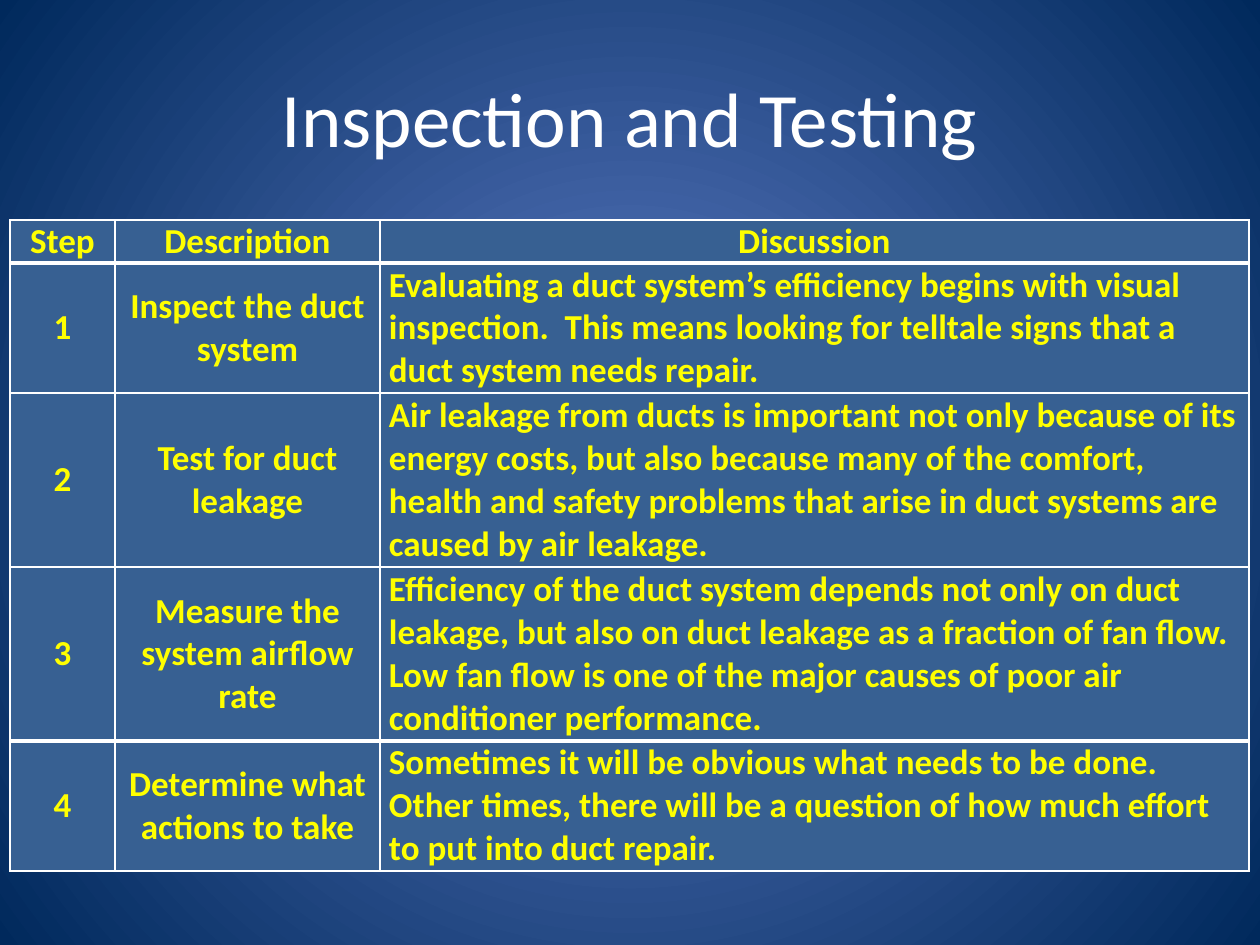
from lxml import etree
from pptx import Presentation
from pptx.dml.color import RGBColor
from pptx.enum.text import MSO_ANCHOR, PP_ALIGN
from pptx.oxml import parse_xml
from pptx.oxml.ns import nsdecls, qn
from pptx.util import Pt

LEFT, CENTER, MIDDLE = PP_ALIGN.LEFT, PP_ALIGN.CENTER, MSO_ANCHOR.MIDDLE
FONT = "Calibri"
WHITE, YELLOW, CELL_BLUE = "FFFFFF", "FFFF00", "376092"
GLOW, NAVY = "5E7CC5", "00295C"

TITLE = "Inspection and Testing"
ROWS = [
    ("Step", "Description", "Discussion"),
    ("1", "Inspect the duct system",
     "Evaluating a duct system’s efficiency begins with visual inspection.  "
     "This means looking for telltale signs that a duct system needs repair."),
    ("2", "Test for duct leakage",
     "Air leakage from ducts is important not only because of its energy costs, "
     "but also because many of the comfort, health and safety problems that arise "
     "in duct systems are caused by air leakage."),
    ("3", "Measure the system airflow rate",
     "Efficiency of the duct system depends not only on duct leakage, but also on "
     "duct leakage as a fraction of fan flow.  Low fan flow is one of the major "
     "causes of poor air conditioner performance."),
    ("4", "Determine what actions to take",
     "Sometimes it will be obvious what needs to be done.  Other times, there will "
     "be a question of how much effort to put into duct repair."),
]
COL_WIDTHS = [105, 265, 869]
ROW_HEIGHTS = [43, 130, 174, 174, 130]
RULES = [1, 3, 1, 1, 3, 1]  # points, from the table's top edge to its bottom edge


def px(n):
    return round(n * 914400 / 126)


def rgb(color):
    return RGBColor.from_string(color)


def write(tf, text, size, color, bold=False, align=CENTER):
    tf.word_wrap = True
    p = tf.paragraphs[0]
    p.alignment = align
    r = p.add_run()
    r.text = text
    r.font.name, r.font.size, r.font.bold = FONT, Pt(size), bold
    r.font.color.rgb = rgb(color)


def set_borders(cell, **widths):
    """Draw white cell borders; the keywords L, R, T, B give widths in points."""
    tcPr = cell._tc.get_or_add_tcPr()
    for i, (side, width) in enumerate(widths.items()):
        tcPr.insert(i, parse_xml(
            f'<a:ln{side} {nsdecls("a")} w="{Pt(width)}"><a:solidFill>'
            f'<a:srgbClr val="{WHITE}"/></a:solidFill></a:ln{side}>'))


def set_radial_background(s, inner, outer):
    fill = s.background.fill
    fill.gradient()
    for stop, color, position in zip(fill.gradient_stops, (inner, outer), (0, 1)):
        stop.color.rgb = rgb(color)
        stop.position = position
    grad = s.element.find(".//" + qn("a:gradFill"))
    grad.remove(grad.find(qn("a:lin")))
    radial = etree.SubElement(grad, qn("a:path"), {"path": "circle"})
    etree.SubElement(radial, qn("a:fillToRect"), dict.fromkeys("ltrb", "50000"))


def add_steps_table(s, left, top):
    shape = s.shapes.add_table(len(ROWS), len(COL_WIDTHS), px(left), px(top),
                               px(sum(COL_WIDTHS)), px(sum(ROW_HEIGHTS)))
    table = shape.table
    for col, width in zip(table.columns, COL_WIDTHS):
        col.width = px(width)
    for i, texts in enumerate(ROWS):
        table.rows[i].height = px(ROW_HEIGHTS[i])
        for j, text in enumerate(texts):
            cell = table.cell(i, j)
            cell.fill.solid()
            cell.fill.fore_color.rgb = rgb(CELL_BLUE)
            cell.vertical_anchor = MIDDLE
            cell.margin_left = cell.margin_right = px(9)
            cell.margin_top = cell.margin_bottom = 0
            write(cell.text_frame, text, 20, YELLOW, bold=True,
                  align=LEFT if i and j == 2 else CENTER)
            set_borders(cell, L=1, R=1, T=RULES[i], B=RULES[i + 1])


prs = Presentation()
prs.slide_width, prs.slide_height = px(1260), px(945)
s = prs.slides.add_slide(prs.slide_layouts[6])
set_radial_background(s, GLOW, NAVY)

title = s.shapes.add_textbox(px(63), px(38), px(1134), px(157))
title.text_frame.vertical_anchor = MIDDLE
write(title.text_frame, TITLE, 44, WHITE)

add_steps_table(s, 10, 220)
prs.save("out.pptx")
